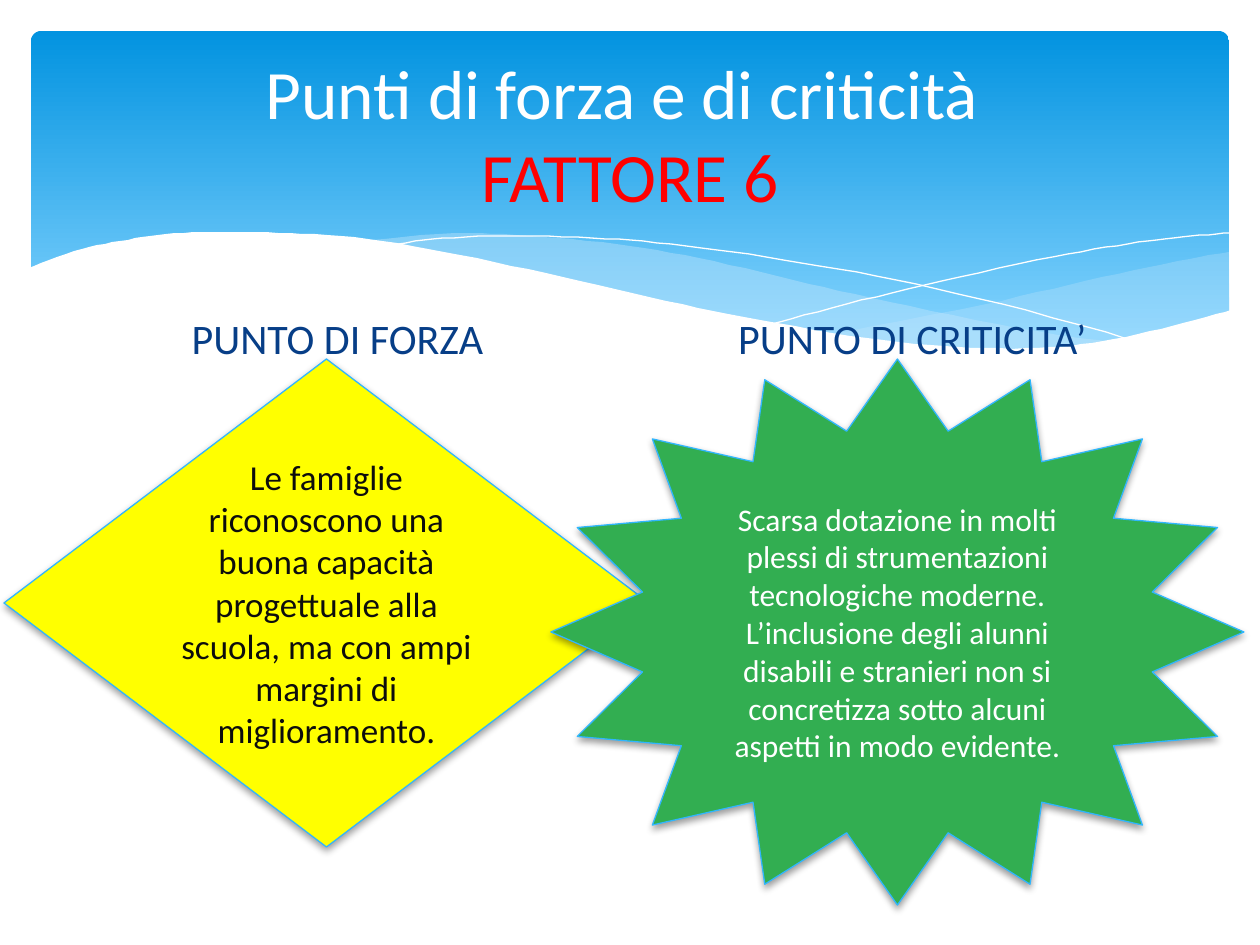
from lxml import etree
from pptx import Presentation, util as u
from pptx.dml.color import RGBColor
from pptx.enum import shapes as sh, text as tx
from pptx.oxml.ns import qn

PX = 914400 / 126
FONT = "Calibri"
HEX = {
    "white": "FFFFFF", "red": "FF0000", "navy": "073E87", "ink": "0D0D0D",
    "deep": "0293E0", "sky": "83D3FE", "mist": "C6E7FC", "edge": "31B6FD",
    "yellow": "FFFF00", "green": "32AE51",
}


def px(*nums):
    return [u.Emu(round(n * PX)) for n in nums]


def rgb(name):
    return RGBColor.from_string(HEX[name])


def curve(knots, steps=6):
    """Smooth points through the knots (Catmull-Rom)."""
    ends = [knots[0], *knots, knots[-1]]
    pts = [knots[0]]
    for a, b, c, d in zip(ends, ends[1:], ends[2:], ends[3:]):
        for i in range(1, steps + 1):
            t = i / steps
            pts.append(tuple(
                (2 * q + (r - p) * t + (2 * p - 5 * q + 4 * r - s) * t ** 2
                 + (3 * q - p - 3 * r + s) * t ** 3) / 2
                for p, q, r, s in zip(a, b, c, d)))
    return pts


def trace(slide, box, pts, fill=None, alpha=None):
    """Filled outline, or a white hairline when no fill is given."""
    left, top = box[:2]
    pts = [(left + x, top + y) for x, y in pts]
    form = slide.shapes.build_freeform(*pts[0], scale=PX)
    form.add_line_segments(pts[1:], close=bool(fill))
    shape = form.convert_to_shape()
    shape.shadow.inherit = False
    if not fill:
        shape.fill.background()
        shape.line.color.rgb = rgb("white")
        shape.line.width = u.Pt(0)
        return
    shape.fill.solid()
    shape.fill.fore_color.rgb = rgb(fill)
    shape.line.fill.background()
    if alpha:
        clr = shape.fill._xPr.find(".//" + qn("a:srgbClr"))
        etree.SubElement(clr, qn("a:alpha"), val=str(alpha * 1000))


def write(shape, runs, size):
    """Centred paragraph; a None run is a line break."""
    frame = shape.text_frame
    frame.word_wrap = True
    frame.vertical_anchor = tx.MSO_ANCHOR.MIDDLE
    par = frame.paragraphs[0]
    par.alignment = tx.PP_ALIGN.CENTER
    for item in runs:
        if item is None:
            par.add_line_break()
            continue
        run = par.add_run()
        run.text, color = item
        run.font.name = FONT
        run.font.size = u.Pt(size)
        run.font.color.rgb = rgb(color)


def label(slide, box, runs, size):
    write(slide.shapes.add_textbox(*px(*box)), runs, size)


def banner(slide, box):
    """Gradient panel with waves along its lower edge."""
    panel = slide.shapes.add_shape(
        sh.MSO_SHAPE.ROUNDED_RECTANGLE, *px(*box))
    panel.adjustments[0] = 0.03
    panel.shadow.inherit = False
    panel.line.fill.background()
    panel.fill.gradient()
    panel.fill.gradient_angle = 270
    for stop, name, pos in zip(panel.fill.gradient_stops,
                               ("deep", "sky"), (0, 0.9)):
        stop.color.rgb = rgb(name)
        stop.position = pos

    # Translucent waves
    right = curve([(1198, 221), (1147, 230), (1054, 250), (951, 274),
                   (802, 303)])
    right += curve([(802, 303), (857, 310), (923, 317), (995, 319),
                    (1056, 316), (1119, 305), (1165, 293), (1199, 280)])
    trace(slide, box, right, "mist", 29)
    left = curve([(1094, 313), (986, 297), (859, 271), (762, 249),
                  (668, 227), (585, 213), (498, 205), (424, 202),
                  (329, 210)])
    left += curve([(329, 210), (425, 225), (535, 249), (682, 281),
                   (788, 302), (879, 314), (972, 319), (1037, 318),
                   (1094, 313)])
    trace(slide, box, left, "mist", 40)

    # Hairlines
    trace(slide, box, curve([
        (358, 215), (402, 208), (474, 205), (560, 207), (640, 213),
        (735, 226), (845, 245), (971, 273), (1112, 312)]))
    trace(slide, box, curve([
        (741, 293), (816, 273), (911, 250), (1022, 226), (1097, 213),
        (1151, 206), (1198, 202)]))

    # White lower edge
    edge = curve([
        (1200, 279), (1141, 295), (1072, 310), (1006, 317), (928, 316),
        (836, 307), (729, 289), (635, 270), (532, 246), (429, 224),
        (337, 208), (259, 202), (192, 201), (135, 203), (89, 210),
        (43, 220), (-2, 237)])
    trace(slide, box, edge + [(-2, 384), (1200, 384)], "white")

    # Title
    label(slide, (box[0] + 32, box[1] + 16, 1134, 173),
          [("Punti di forza e di criticità ", "white"), None,
           ("FATTORE 6", "red")], 39.6)


def point(slide, box, kind, fill, words, color, size):
    """Outlined shape with a soft shadow and its text."""
    shape = slide.shapes.add_shape(kind, *px(*box))
    shape.fill.solid()
    shape.fill.fore_color.rgb = rgb(fill)
    shape.line.color.rgb = rgb("edge")
    shape.line.width = u.Pt(0.75)
    shape.shadow.inherit = False
    glow = etree.SubElement(
        shape._element.spPr.find(qn("a:effectLst")), qn("a:outerShdw"),
        blurRad=str(u.Pt(4)), dist=str(u.Pt(2)), dir="5400000",
        rotWithShape="0")
    clr = etree.SubElement(glow, qn("a:srgbClr"), val="000000")
    etree.SubElement(clr, qn("a:alpha"), val="38000")
    write(shape, [(words, color)], size)


def main():
    deck = Presentation()
    deck.slide_width, deck.slide_height = px(1260, 945)
    slide = deck.slides.add_slide(deck.slide_layouts[6])
    banner(slide, (31, 31, 1198, 340))

    # Column headings
    for left, words in ((74, "PUNTO DI FORZA"),
                        (649, "PUNTO DI CRITICITA’")):
        label(slide, (left, 294, 527, 88), [(words, "navy")], 24)

    # Strength and weakness
    point(slide, (4, 359, 645, 488), sh.MSO_SHAPE.DIAMOND, "yellow",
          "Le famiglie riconoscono una buona capacità progettuale alla "
          "scuola, ma con ampi margini di miglioramento.", "ink", 20)
    point(slide, (551, 359, 693, 546), sh.MSO_SHAPE.STAR_16_POINT, "green",
          "Scarsa dotazione in molti plessi di strumentazioni tecnologiche "
          "moderne. L’inclusione degli alunni disabili e stranieri non si "
          "concretizza sotto alcuni aspetti in modo evidente.", "white", 18)
    deck.save("out.pptx")


if __name__ == "__main__":
    main()
